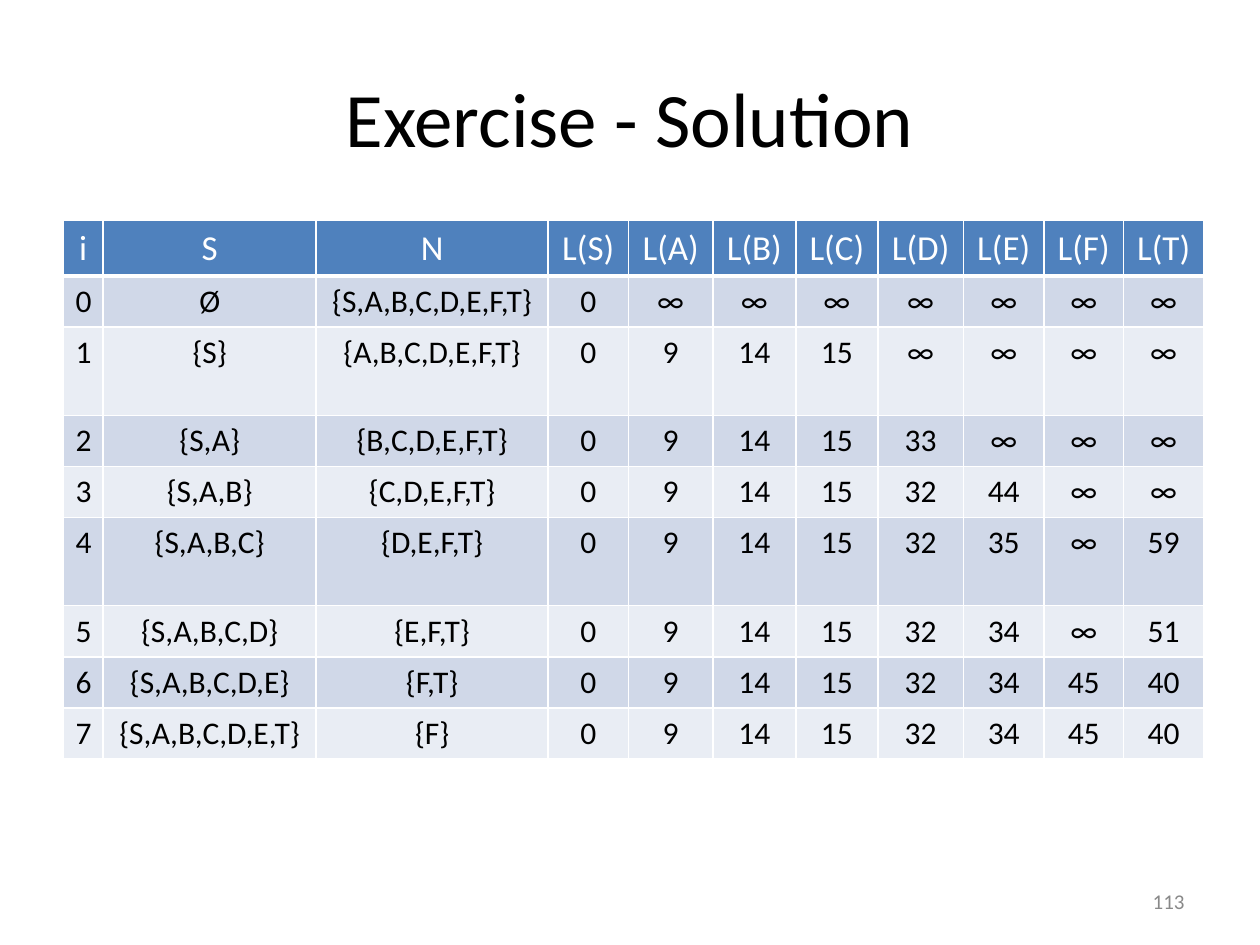
"""Build a slide with the step-by-step solution table of a shortest-path exercise."""

import dataclasses

import pptx
import pptx.dml.color
import pptx.enum.text
import pptx.oxml.ns
import pptx.presentation
import pptx.slide
import pptx.table
import pptx.text.text
import pptx.util
from lxml import etree

FONT = "Calibri"
COLORS = {
    "black": "000000",
    "white": "FFFFFF",
    "header": "4F81BD",
    "odd": "D0D8E8",
    "even": "E9EDF4",
    "number": "898989",
}
ALIGN = pptx.enum.text.PP_ALIGN
MIDDLE = pptx.enum.text.MSO_ANCHOR.MIDDLE

COLUMN_WIDTHS = [23, 121.7, 132.5, 46, 48.2, 47.5, 46.8, 49, 46, 45.4, 46]
HEADER_HEIGHT, ROW_HEIGHT, TALL_ROW_HEIGHT = 31.2, 29.2, 50.4
HEADINGS = "i S N L(S) L(A) L(B) L(C) L(D) L(E) L(F) L(T)".split()


@dataclasses.dataclass(frozen=True)
class Step:
    """One iteration: the settled set, the remaining set and the path lengths."""

    settled: str
    remaining: str
    lengths: str
    height: float = ROW_HEIGHT


@dataclasses.dataclass(frozen=True)
class RowStyle:
    """Look shared by the cells of a row."""

    fill: str
    text: str
    size: float
    bottom_border: float


HEADER_STYLE = RowStyle("header", "white", 20, 3)
BODY_STYLES = [RowStyle("odd", "black", 18, 1), RowStyle("even", "black", 18, 1)]

STEPS = [
    Step("Ø", "{S,A,B,C,D,E,F,T}", "0 ∞ ∞ ∞ ∞ ∞ ∞ ∞"),
    Step("{S}", "{A,B,C,D,E,F,T}", "0 9 14 15 ∞ ∞ ∞ ∞", TALL_ROW_HEIGHT),
    Step("{S,A}", "{B,C,D,E,F,T}", "0 9 14 15 33 ∞ ∞ ∞"),
    Step("{S,A,B}", "{C,D,E,F,T}", "0 9 14 15 32 44 ∞ ∞"),
    Step("{S,A,B,C}", "{D,E,F,T}", "0 9 14 15 32 35 ∞ 59", TALL_ROW_HEIGHT),
    Step("{S,A,B,C,D}", "{E,F,T}", "0 9 14 15 32 34 ∞ 51"),
    Step("{S,A,B,C,D,E}", "{F,T}", "0 9 14 15 32 34 45 40"),
    Step("{S,A,B,C,D,E,T}", "{F}", "0 9 14 15 32 34 45 40"),
]


def write_text(
    text_frame: pptx.text.text.TextFrame,
    text: str,
    size: float,
    color: str,
    alignment: ALIGN,
) -> None:
    """Set one formatted line of text."""
    text_frame.text = text
    paragraph = text_frame.paragraphs[0]
    paragraph.alignment = alignment
    font = paragraph.runs[0].font
    font.name = FONT
    font.size = pptx.util.Pt(size)
    font.bold = False
    font.color.rgb = pptx.dml.color.RGBColor.from_string(COLORS[color])


def add_borders(cell: pptx.table._Cell, bottom: float) -> None:
    """Give a cell white borders, with its own width at the bottom."""
    properties = cell._tc.get_or_add_tcPr()
    qualified = pptx.oxml.ns.qn
    for side, width in (("L", 1), ("R", 1), ("T", 1), ("B", bottom)):
        line = etree.SubElement(properties, qualified(f"a:ln{side}"), w=str(pptx.util.Pt(width)))
        fill = etree.SubElement(line, qualified("a:solidFill"))
        etree.SubElement(fill, qualified("a:srgbClr"), val=COLORS["white"])


def fill_row(table: pptx.table.Table, index: int, texts: list[str], style: RowStyle) -> None:
    """Write and format all cells of a row."""
    for cell, text in zip(table.rows[index].cells, texts):
        write_text(cell.text_frame, text, style.size, style.text, ALIGN.CENTER)
        add_borders(cell, style.bottom_border)
        cell.fill.solid()
        cell.fill.fore_color.rgb = pptx.dml.color.RGBColor.from_string(COLORS[style.fill])


def add_title(slide: pptx.slide.Slide, text: str) -> None:
    """Place and format the title."""
    title = slide.shapes.title
    title.left, title.top = pptx.util.Pt(36), pptx.util.Pt(21.6)
    title.width, title.height = pptx.util.Pt(648), pptx.util.Pt(90)
    title.text_frame.vertical_anchor = MIDDLE
    write_text(title.text_frame, text, 44, "black", ALIGN.CENTER)


def add_steps_table(slide: pptx.slide.Slide) -> None:
    """Add the table with a header and one row for each step."""
    heights = [HEADER_HEIGHT, *(step.height for step in STEPS)]
    table = slide.shapes.add_table(
        len(heights),
        len(COLUMN_WIDTHS),
        pptx.util.Pt(36),
        pptx.util.Pt(126),
        pptx.util.Pt(sum(COLUMN_WIDTHS)),
        pptx.util.Pt(sum(heights)),
    ).table
    for column, width in zip(table.columns, COLUMN_WIDTHS):
        column.width = pptx.util.Pt(width)
    for row, height in zip(table.rows, heights):
        row.height = pptx.util.Pt(height)
    fill_row(table, 0, HEADINGS, HEADER_STYLE)
    for index, step in enumerate(STEPS):
        texts = [str(index), step.settled, step.remaining, *step.lengths.split()]
        fill_row(table, index + 1, texts, BODY_STYLES[index % 2])


def add_slide_number(slide: pptx.slide.Slide, text: str) -> None:
    """Add the slide number at the bottom right."""
    box = slide.shapes.add_textbox(
        pptx.util.Pt(516), pptx.util.Pt(500.5), pptx.util.Pt(168), pptx.util.Pt(28.75)
    )
    box.text_frame.word_wrap = True
    box.text_frame.vertical_anchor = MIDDLE
    write_text(box.text_frame, text, 12, "number", ALIGN.RIGHT)


def main() -> None:
    """Build and save the presentation."""
    presentation = pptx.Presentation()
    presentation.slide_width = pptx.util.Pt(720)
    presentation.slide_height = pptx.util.Pt(540)
    slide = presentation.slides.add_slide(presentation.slide_layouts.get_by_name("Title Only"))
    add_title(slide, "Exercise - Solution")
    add_steps_table(slide)
    add_slide_number(slide, "113")
    presentation.save("out.pptx")


if __name__ == "__main__":
    main()
